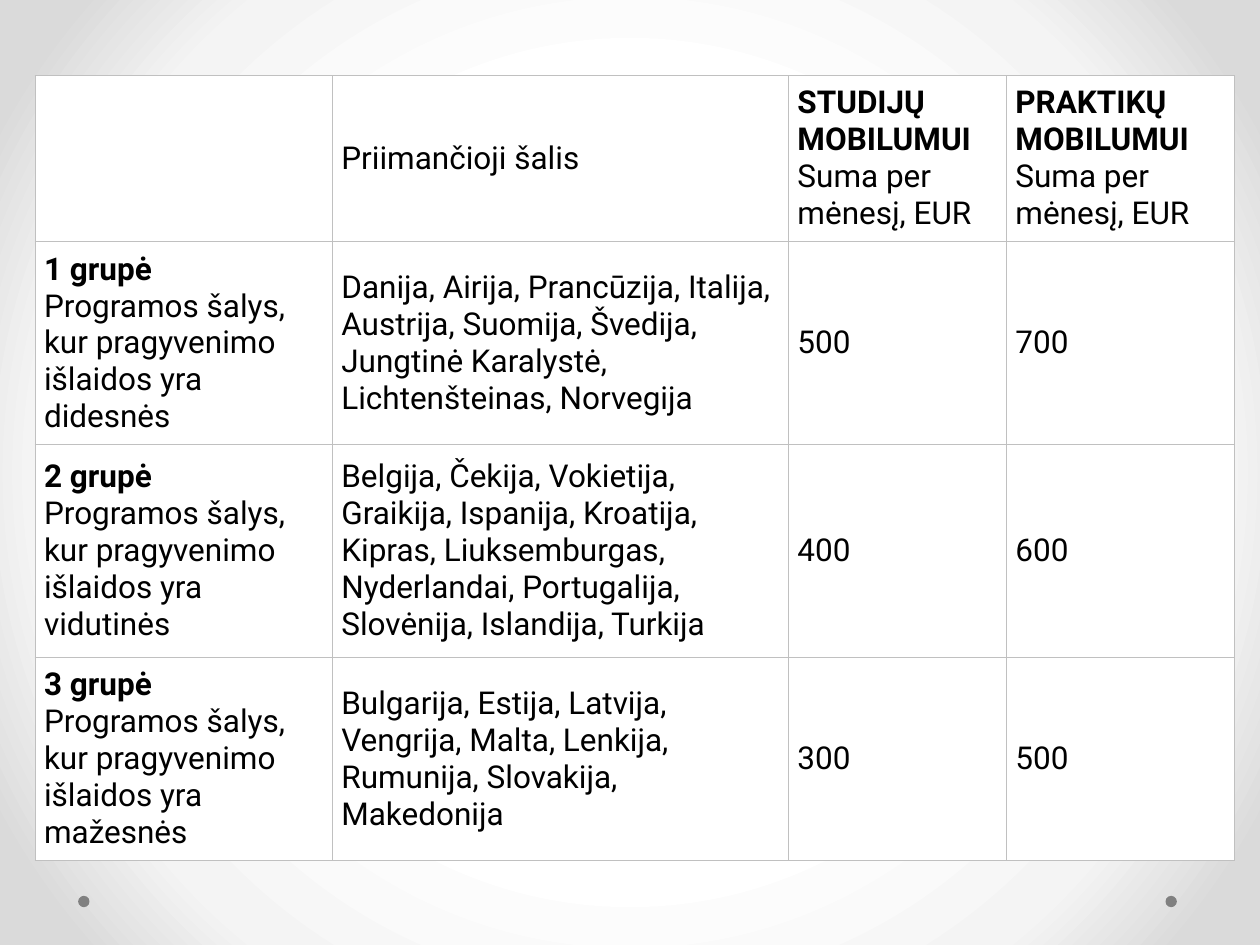
from typing import NamedTuple

from pptx import Presentation
from pptx.dml.color import RGBColor
from pptx.enum.shapes import MSO_SHAPE
from pptx.enum.text import MSO_ANCHOR
from pptx.oxml import parse_xml
from pptx.oxml.ns import nsdecls
from pptx.util import Inches, Pt

BLACK = RGBColor(0x00, 0x00, 0x00)
WHITE = RGBColor(0xFF, 0xFF, 0xFF)
BORDER_GREY = RGBColor(0xC0, 0xC0, 0xC0)
DOT_GREY = RGBColor(0x80, 0x80, 0x80)
GLOW_STOPS = (
    (50, WHITE),
    (76, RGBColor(0xF4, 0xF4, 0xF4)),
    (92, RGBColor(0xDA, 0xDA, 0xDA)),
)

FONT = "Roboto"
CELL_MARGIN = Inches(0.07)
COLUMN_WIDTHS = (2.36, 3.62, 1.73, 1.81)
ROW_HEIGHTS = (1.32, 1.61, 1.69, 1.61)


class CellText(NamedTuple):
    body: str = ""
    heading: str = ""


class CountryGroup(NamedTuple):
    number: int
    cost_level: str
    countries: str
    study_grant: int
    internship_grant: int

    def cells(self) -> list[CellText]:
        expenses = f"Programos šalys, kur pragyvenimo išlaidos yra {self.cost_level}"
        return [
            CellText(expenses, f"{self.number} grupė"),
            CellText(self.countries),
            CellText(str(self.study_grant)),
            CellText(str(self.internship_grant)),
        ]


MONTHLY_SUM = "Suma per mėnesį, EUR"
HEADER = [
    CellText(),
    CellText("Priimančioji šalis"),
    CellText(MONTHLY_SUM, "STUDIJŲ MOBILUMUI"),
    CellText(MONTHLY_SUM, "PRAKTIKŲ MOBILUMUI"),
]
GROUPS = (
    CountryGroup(
        1, "didesnės",
        "Danija, Airija, Prancūzija, Italija, Austrija, Suomija, Švedija, "
        "Jungtinė Karalystė, Lichtenšteinas, Norvegija",
        500, 700,
    ),
    CountryGroup(
        2, "vidutinės",
        "Belgija, Čekija, Vokietija, Graikija, Ispanija, Kroatija, Kipras, "
        "Liuksemburgas, Nyderlandai, Portugalija, Slovėnija, Islandija, Turkija",
        400, 600,
    ),
    CountryGroup(
        3, "mažesnės",
        "Bulgarija, Estija, Latvija, Vengrija, Malta, Lenkija, Rumunija, "
        "Slovakija, Makedonija",
        300, 500,
    ),
)


def set_radial_background(slide) -> None:
    stops = "".join(
        f'<a:gs pos="{percent * 1000}"><a:srgbClr val="{color}"/></a:gs>'
        for percent, color in GLOW_STOPS
    )
    background = parse_xml(
        f'<p:bg {nsdecls("p", "a")}><p:bgPr><a:gradFill rotWithShape="1">'
        f'<a:gsLst>{stops}</a:gsLst><a:path path="circle">'
        '<a:fillToRect l="50000" t="50000" r="50000" b="50000"/></a:path>'
        "</a:gradFill><a:effectLst/></p:bgPr></p:bg>"
    )
    slide.element.cSld.insert(0, background)


def add_dot(slide, left: float) -> None:
    size = Inches(0.09)
    dot = slide.shapes.add_shape(
        MSO_SHAPE.OVAL, Inches(left), Inches(7.11), size, size
    )
    dot.shadow.inherit = False
    dot.fill.solid()
    dot.fill.fore_color.rgb = DOT_GREY
    dot.line.fill.background()


def set_borders(cell) -> None:
    properties = cell._tc.get_or_add_tcPr()
    for index, side in enumerate(("lnL", "lnR", "lnT", "lnB")):
        border = parse_xml(
            f'<a:{side} {nsdecls("a")} w="{Pt(0.75)}"><a:solidFill>'
            f'<a:srgbClr val="{BORDER_GREY}"/></a:solidFill></a:{side}>'
        )
        properties.insert(index, border)


def fill_cell(cell, content: CellText) -> None:
    cell.fill.solid()
    cell.fill.fore_color.rgb = WHITE
    set_borders(cell)
    cell.vertical_anchor = MSO_ANCHOR.MIDDLE
    cell.margin_left = cell.margin_right = CELL_MARGIN
    cell.margin_top = cell.margin_bottom = CELL_MARGIN

    cell.text = "\n".join(filter(None, (content.heading, content.body)))
    for index, paragraph in enumerate(cell.text_frame.paragraphs):
        font = paragraph.font
        font.name = FONT
        font.size = Pt(18)
        font.bold = bool(content.heading) and index == 0
        font.color.rgb = BLACK


def add_grant_table(slide) -> None:
    rows = [HEADER] + [group.cells() for group in GROUPS]
    table = slide.shapes.add_table(
        len(rows), len(COLUMN_WIDTHS), Inches(0.28), Inches(0.6),
        Inches(sum(COLUMN_WIDTHS)), Inches(sum(ROW_HEIGHTS)),
    ).table
    table.horz_banding = False
    for column, width in zip(table.columns, COLUMN_WIDTHS):
        column.width = Inches(width)
    for row, height, contents in zip(table.rows, ROW_HEIGHTS, rows):
        row.height = Inches(height)
        for cell, content in zip(row.cells, contents):
            fill_cell(cell, content)


def main() -> None:
    presentation = Presentation()
    presentation.slide_width = Inches(10)
    presentation.slide_height = Inches(7.5)
    slide = presentation.slides.add_slide(presentation.slide_layouts[6])
    set_radial_background(slide)
    for left in (9.25, 0.62):
        add_dot(slide, left)
    add_grant_table(slide)
    presentation.save("out.pptx")


if __name__ == "__main__":
    main()
